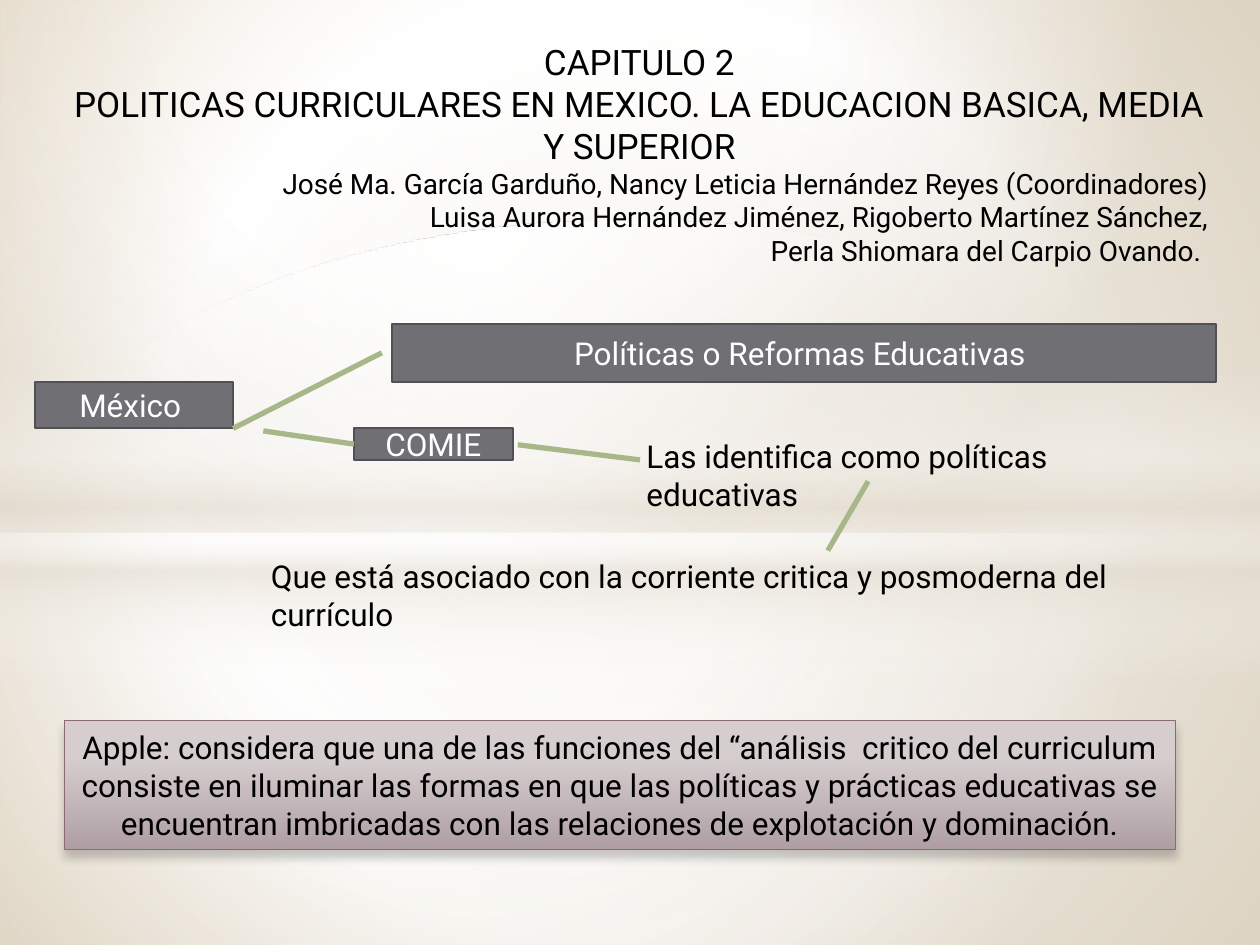
from lxml import etree
from pptx import Presentation
from pptx.dml.color import RGBColor
from pptx.enum import shapes, text
from pptx.oxml import ns, parse_xml
from pptx.util import Inches, Pt

BLACK = RGBColor(0x00, 0x00, 0x00)
WHITE = RGBColor(0xFF, 0xFF, 0xFF)
GRAY = RGBColor(0x6F, 0x6F, 0x74)
EDGE = RGBColor(0x51, 0x51, 0x55)
GREEN = RGBColor(0xA7, 0xB7, 0x89)
PLUM = RGBColor(0x8D, 0x69, 0x74)
SNOW = WHITE
SAND = RGBColor(0xE3, 0xDC, 0xCF)
TAN = RGBColor(0xDF, 0xD4, 0xC1)
KHAKI = RGBColor(0xCC, 0xB7, 0x91)
PALE = RGBColor(0xD6, 0xCD, 0xCF)
MAUVE = RGBColor(0xAF, 0x9F, 0xA4)

FONT = "Roboto"
LEFT, MID, RIGHT = text.PP_ALIGN.LEFT, text.PP_ALIGN.CENTER, text.PP_ALIGN.RIGHT
RECT, OVAL = shapes.MSO_SHAPE.RECTANGLE, shapes.MSO_SHAPE.OVAL

# Gradient stops: position, colour, opacity (all in percent)
CENTER, HIGH = (50, 50, 50, 50), (38, -20, 62, 120)
BACK = [(0, TAN, 100), (60, SNOW, 100), (100, KHAKI, 100)]
PANELS = [
    (RECT, (0, 4.23, 10, 3.27), [(0, SNOW, 91), (37, SNOW, 76), (100, SAND, 79)], HIGH),
    (RECT, (0, 0, 10, 4.23), [(0, SNOW, 89), (48, SNOW, 62), (100, SAND, 79)], HIGH),
    (RECT, (0, 2.9, 10, 2.5), [(0, SNOW, 0), (29, SNOW, 30), (45, SAND, 40),
                               (55, SNOW, 26), (65, SAND, 60), (100, SNOW, 0)], None),
    (OVAL, (0, 1.75, 10, 5.58), [(0, SNOW, 100), (54, SNOW, 0)], HIGH),
]

TITLE = [
    ("CAPITULO 2", 20, MID),
    ("POLITICAS CURRICULARES EN MEXICO. LA EDUCACION BASICA, MEDIA Y SUPERIOR", 20, MID),
    ("José Ma. García Garduño, Nancy Leticia Hernández Reyes (Coordinadores)", 16, RIGHT),
    ("Luisa Aurora Hernández Jiménez, Rigoberto Martínez Sánchez,", 16, RIGHT),
    ("Perla Shiomara del Carpio Ovando. ", 16, RIGHT),
]
BOXES = [
    ("México ", (0.28, 3.03, 1.57, 0.37)),
    ("Políticas o Reformas Educativas ", (3.11, 2.57, 6.54, 0.46)),
    ("COMIE", (2.81, 3.4, 1.26, 0.25)),
]
NOTES = [
    ("Las identifica como políticas educativas", (5.08, 3.42, 4.25, 0.68)),
    ("Que está asociado con la corriente critica y posmoderna del currículo",
     (2.1, 4.37, 7.32, 0.68)),
]
QUOTE = ("Apple: considera que una de las funciones del “análisis  critico del curriculum "
         "consiste en iluminar las formas en que las políticas y prácticas educativas se "
         "encuentran imbricadas con las relaciones de explotación y dominación.")
LINES = [
    (1.85, 3.4, 3.03, 2.8),
    (2.81, 3.53, 2.09, 3.42),
    (4.11, 3.53, 5.08, 3.65),
    (6.89, 3.82, 6.57, 4.37),
]


def blend(parent, stops, focus=None):
    """Swap the solid fill in parent for a gradient: round with a focus, else downward."""
    grad = etree.Element(ns.qn("a:gradFill"), rotWithShape="1")
    group = etree.SubElement(grad, ns.qn("a:gsLst"))
    for pos, color, alpha in stops:
        stop = etree.SubElement(group, ns.qn("a:gs"), pos=str(pos * 1000))
        tint = etree.SubElement(stop, ns.qn("a:srgbClr"), val=str(color))
        if alpha < 100:
            etree.SubElement(tint, ns.qn("a:alpha"), val=str(alpha * 1000))
    if focus:
        way = etree.SubElement(grad, ns.qn("a:path"), {"path": "circle"})
        sides = {k: str(v * 1000) for k, v in zip("ltrb", focus)}
        etree.SubElement(way, ns.qn("a:fillToRect"), sides)
    else:
        etree.SubElement(grad, ns.qn("a:lin"), ang="5400000", scaled="0")
    parent.replace(parent.find(ns.qn("a:solidFill")), grad)


def write(shape, rows, color, anchor, pad=0.05):
    """Fill a shape with rows of (wording, size, alignment)."""
    frame = shape.text_frame
    frame.word_wrap = True
    frame.auto_size = text.MSO_AUTO_SIZE.NONE
    frame.vertical_anchor = anchor
    frame.margin_left = frame.margin_right = Inches(0.05)
    frame.margin_top = frame.margin_bottom = Inches(pad)
    frame.text = "\n".join(row[0] for row in rows)
    for para, (_, size, align) in zip(frame.paragraphs, rows):
        para.alignment = align
        font = para.runs[0].font
        font.name, font.size, font.color.rgb = FONT, Pt(size), color


def draw(slide, kind, at, fill, edge=None, width=1.25):
    shape = slide.shapes.add_shape(kind, *map(Inches, at))
    shape.shadow.inherit = False
    shape.fill.solid()
    shape.fill.fore_color.rgb = fill
    if edge is None:
        shape.line.fill.background()
    else:
        shape.line.color.rgb = edge
        shape.line.width = Pt(width)
    return shape


def link(slide, ends):
    line = slide.shapes.add_connector(shapes.MSO_CONNECTOR.STRAIGHT, *map(Inches, ends))
    line.line.color.rgb = GREEN
    line.line.width = Pt(3)
    etree.SubElement(line.element.spPr, ns.qn("a:effectLst"))
    return line


def main():
    deck = Presentation()
    deck.slide_width, deck.slide_height = Inches(10), Inches(7.5)
    slide = deck.slides.add_slide(deck.slide_layouts[5])

    slide.background.fill.solid()
    slide.background.fill.fore_color.rgb = SNOW
    blend(slide.element.find(".//" + ns.qn("p:bgPr")), BACK, CENTER)
    for kind, at, stops, focus in PANELS:
        panel = draw(slide, kind, at, SNOW)
        blend(panel.element.spPr, stops, focus)

    title = slide.shapes.title
    title.left, title.top, title.width, title.height = map(Inches, (0.51, 0.27, 9.13, 2.41))
    write(title, TITLE, BLACK, text.MSO_ANCHOR.TOP)
    title.element.getparent().append(title.element)  # in front of the panels

    boxes = []
    for words, at in BOXES:
        box = draw(slide, RECT, at, GRAY, EDGE)
        write(box, [(words, 18, MID)], WHITE, text.MSO_ANCHOR.MIDDLE, 0)
        boxes.append(box)
    for words, at in NOTES:
        note = slide.shapes.add_textbox(*map(Inches, at))
        write(note, [(words, 18, LEFT)], BLACK, text.MSO_ANCHOR.TOP)

    lines = [link(slide, ends) for ends in LINES]
    lines[1].begin_connect(boxes[2], 1)

    quote = draw(slide, RECT, (0.51, 5.72, 8.82, 1.02), PALE, PLUM, 0.75)
    blend(quote.element.spPr, [(28, PALE, 100), (100, MAUVE, 100)])
    write(quote, [(QUOTE, 18, MID)], BLACK, text.MSO_ANCHOR.MIDDLE, 0)
    quote.element.spPr.find(ns.qn("a:effectLst")).append(parse_xml(
        f'<a:outerShdw {ns.nsdecls("a")} blurRad="{Pt(5)}" dist="{Pt(4)}" dir="5400000" '
        'rotWithShape="0"><a:srgbClr val="000000"><a:alpha val="20000"/></a:srgbClr>'
        '</a:outerShdw>'))

    deck.save("out.pptx")


if __name__ == "__main__":
    main()
